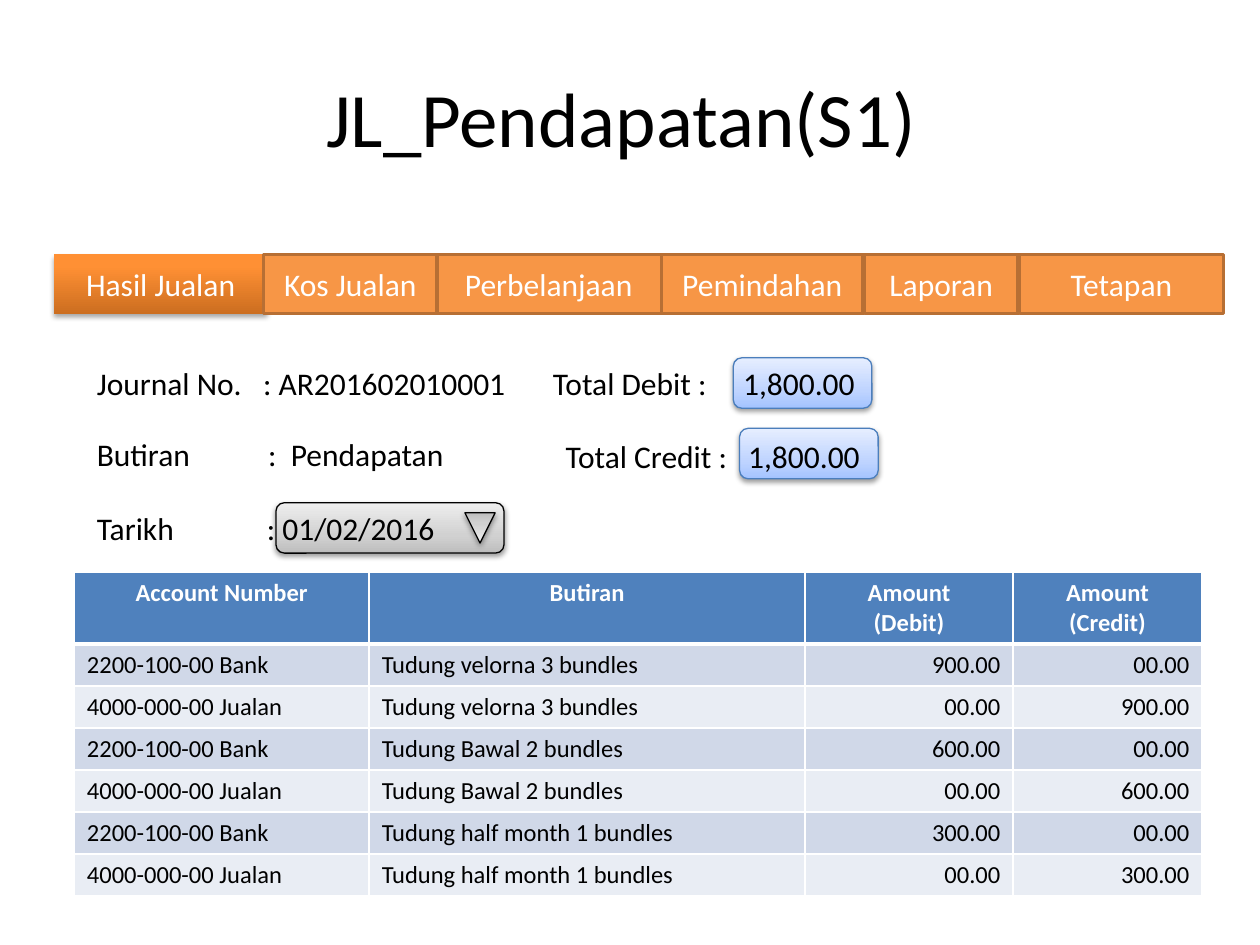
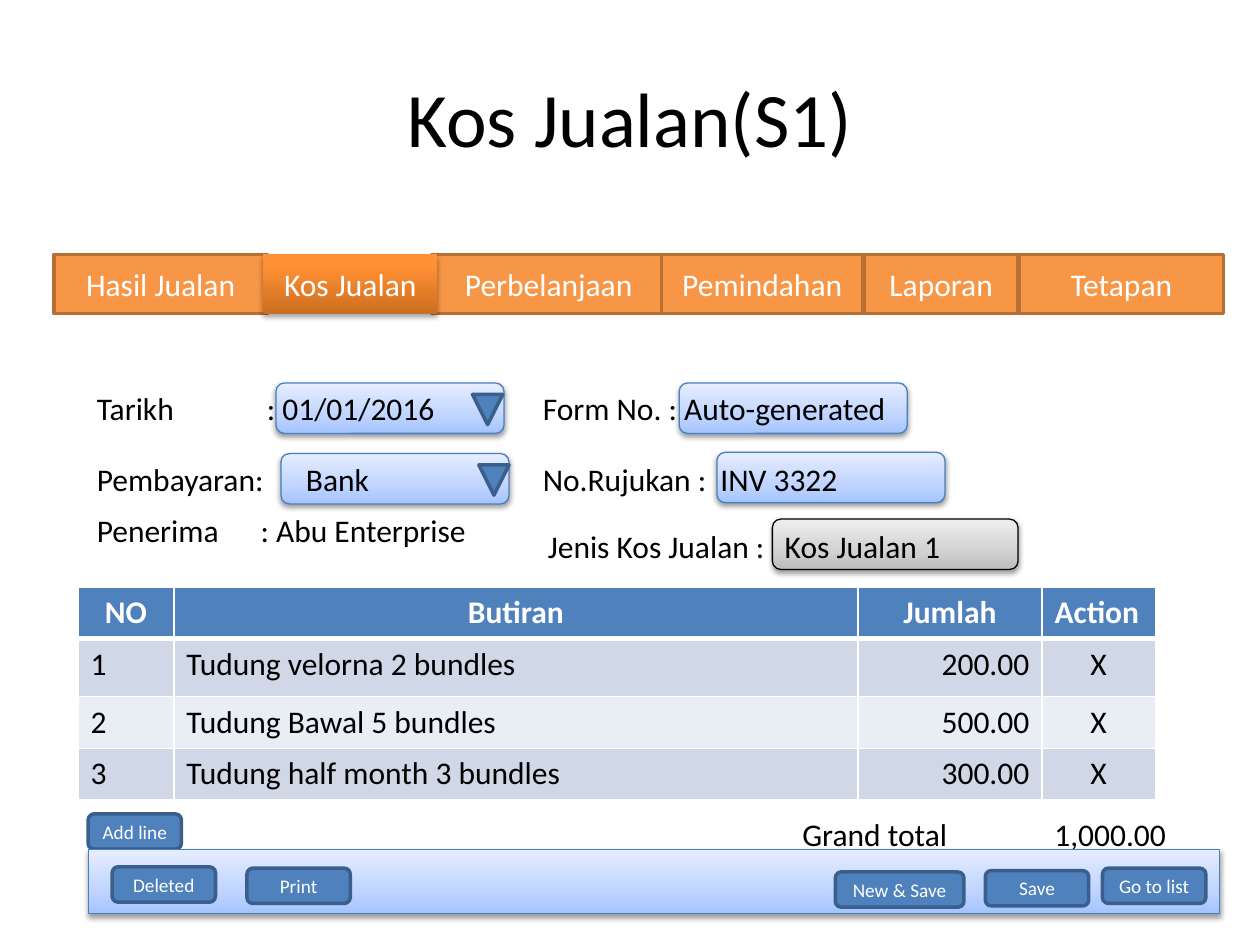
from lxml import etree
from pptx import Presentation
from pptx.dml.color import RGBColor
from pptx.enum import shapes, text
from pptx.oxml.ns import qn
from pptx.util import Inches, Pt

FONT = "Calibri"
BLACK, WHITE = "000000", "FFFFFF"
BLUE, BLUE_EDGE = "4F81BD", "3A5F8C"
ORANGE, ORANGE_EDGE = "F79646", "B76F34"
BANDS = ("D0D8E8", "E9EDF4")
PALE_BLUE = ((0, "A4C4FF"), (35, "BFD4FF"), (100, "E6EEFF"))
GREY = ((0, "BDBDBD"), (35, "D1D1D1"), (100, "EEEEEE"))
DEEP_ORANGE = ((0, "CC6E20"), (80, "FF9034"), (100, "FF9136"))
FIELD_EDGES = {PALE_BLUE: "4B7EBC", GREY: BLACK}

RECT = shapes.MSO_SHAPE.RECTANGLE
ROUNDED = shapes.MSO_SHAPE.ROUNDED_RECTANGLE
TRIANGLE = shapes.MSO_SHAPE.ISOSCELES_TRIANGLE
LEFT, CENTER, RIGHT = text.PP_ALIGN.LEFT, text.PP_ALIGN.CENTER, text.PP_ALIGN.RIGHT

MENU_BOX = (0.43, 2.02, 9.28, 0.47)
MENU = (
    ("Hasil Jualan", 0, 1.69),
    ("Perbelanjaan", 3, 1.85),
    ("Laporan", 6.43, 1.22),
    ("Tetapan", 7.66, 1.62),
    ("Pemindahan", 4.82, 1.6),
    ("Kos Jualan", 1.66, 1.38),
)
FIELD_HEIGHT = 0.4
ARROW_SIZE = 0.24


def rgb(hex_code):
    """Turn a hex string into a colour."""
    return RGBColor.from_string(hex_code)


def inches(*lengths):
    """Convert several lengths to Inches."""
    return [Inches(length) for length in lengths]


def write(frame, words, size, color, align=LEFT, bold=False):
    """Fill a text frame and format all its runs."""
    frame.text = words
    for paragraph in frame.paragraphs:
        paragraph.alignment = align
        for run in paragraph.runs:
            run.font.name, run.font.size, run.font.bold = FONT, Pt(size), bold
            run.font.color.rgb = rgb(color)


def add_color(parent, color, alpha=100):
    """Append a solid colour element with its opacity."""
    node = etree.SubElement(parent, qn("a:srgbClr"), val=color)
    if alpha < 100:
        etree.SubElement(node, qn("a:alpha"), val=str(alpha * 1000))


def fill_gradient(shape, stops):
    """Fill a shape upwards through the given colour stops."""
    shape.fill.gradient()
    gradient = shape.element.spPr.find(qn("a:gradFill"))
    gradient.clear()
    gradient.set("rotWithShape", "1")
    stop_list = etree.SubElement(gradient, qn("a:gsLst"))
    for position, color in stops:
        add_color(etree.SubElement(stop_list, qn("a:gs"), pos=str(position * 1000)), color)
    etree.SubElement(gradient, qn("a:lin"), ang="16200000", scaled="0")


def cast_shadow(shape, alpha, distance):
    """Drop a soft shadow straight below a shape."""
    effects = shape.element.spPr.find(qn("a:effectLst"))
    shadow = etree.SubElement(
        effects, qn("a:outerShdw"), blurRad=str(Pt(3.1)), dist=str(Pt(distance)),
        dir="5400000", rotWithShape="0")
    add_color(shadow, BLACK, alpha)


def add_block(parent, kind, box, fill, edge=None, edge_width=2):
    """Add a flat shape, or a shaded one when the fill is a list of stops."""
    block = parent.add_shape(kind, *inches(*box))
    block.shadow.inherit = False
    if isinstance(fill, str):
        block.fill.solid()
        block.fill.fore_color.rgb = rgb(fill)
    else:
        fill_gradient(block, fill)
        cast_shadow(block, 38 if edge else 35, 1.6 if edge else 1.8)
    if edge:
        block.line.color.rgb = rgb(edge)
        block.line.width = Pt(edge_width)
    else:
        block.line.fill.background()
    return block


def add_caption(slide, left, top, width, words, stops=()):
    """Place one line of text whose tabs reach the given stops."""
    frame = slide.shapes.add_textbox(*inches(left, top, width, FIELD_HEIGHT)).text_frame
    frame.word_wrap = True
    write(frame, words, 18, BLACK)
    if stops:
        tabs = etree.SubElement(frame.paragraphs[0]._p.get_or_add_pPr(), qn("a:tabLst"))
        for stop in stops:
            etree.SubElement(tabs, qn("a:tab"), pos=str(Inches(stop)), algn="l")


def add_field(slide, left, top, width, fill=PALE_BLUE):
    """Draw the shaded box behind an input value."""
    add_block(slide.shapes, ROUNDED, (left, top, width, FIELD_HEIGHT),
              fill, FIELD_EDGES[fill], 0.75)


def add_arrow(slide, left, top, fill=BLUE, edge=BLUE_EDGE, edge_width=2):
    """Draw the downward arrow of a drop-down field."""
    arrow = add_block(slide.shapes, TRIANGLE, (left, top, ARROW_SIZE, ARROW_SIZE),
                      fill, edge, edge_width)
    arrow.rotation = 180


def add_menu(slide, box, active):
    """Draw the menu bar with its active entry shaded."""
    left, top, _, height = box
    group = slide.shapes.add_group_shape().shapes
    for name, offset, width in MENU:
        look = (DEEP_ORANGE,) if name == active else (ORANGE, ORANGE_EDGE)
        entry = add_block(group, RECT, (left + offset, top, width, height), *look)
        write(entry.text_frame, name, 18, WHITE, CENTER)


def add_button(parent, left, top, width, name):
    """Draw a small labelled button."""
    button = add_block(parent, ROUNDED, (left, top, width, 0.28), BLUE, BLUE_EDGE)
    write(button.text_frame, name, 11, WHITE, CENTER)


def add_button_bar(slide, box):
    """Draw the bottom bar and the buttons on it."""
    left, top, _, _ = box
    group = slide.shapes.add_group_shape().shapes
    add_block(group, RECT, box, PALE_BLUE, FIELD_EDGES[PALE_BLUE], 0.75)
    for name, across, down, width in (
        ("Save", 7.12, 0.17, 0.82), ("New & Save", 5.93, 0.18, 1.02),
        ("Print", 1.26, 0.15, 0.82), ("Deleted", 0.19, 0.14, 0.82),
        ("Go to list", 8.05, 0.15, 0.82),
    ):
        add_button(group, left + across, top + down, width, name)


def style_cell(cell, fill, bottom_width):
    """Give a cell white borders and a solid fill."""
    properties = cell._tc.get_or_add_tcPr()
    for side, width in (("L", 1), ("R", 1), ("T", 1), ("B", bottom_width)):
        line = etree.SubElement(properties, qn(f"a:ln{side}"), w=str(Pt(width)))
        add_color(etree.SubElement(line, qn("a:solidFill")), WHITE)
    cell.fill.solid()
    cell.fill.fore_color.rgb = rgb(fill)


def add_ledger(slide, left, top, widths, heights, rows, size, aligns, header_aligns):
    """Build a banded table whose first row is the header."""
    box = inches(left, top, sum(widths), sum(heights))
    table = slide.shapes.add_table(len(rows), len(widths), *box).table
    for column, width in zip(table.columns, widths):
        column.width = Inches(width)
    for index, (row, height, values) in enumerate(zip(table.rows, heights, rows)):
        row.height = Inches(height)
        header = index == 0
        fill = BLUE if header else BANDS[(index - 1) % 2]
        for cell, value, align in zip(row.cells, values, header_aligns if header else aligns):
            style_cell(cell, fill, 3 if header else 1)
            write(cell.text_frame, value, size, WHITE if header else BLACK, align, header)


def start_slide(deck, heading, active):
    """Add a slide with its title and menu bar."""
    slide = deck.slides.add_slide(deck.slide_layouts[5])
    title = slide.shapes.title
    title.left, title.top, title.width, title.height = inches(0.5, 0.3, 9, 1.25)
    write(title.text_frame, heading, 44, BLACK, CENTER)
    add_menu(slide, MENU_BOX, active)
    return slide


def build_income_journal(deck):
    """Build the income journal slide."""
    slide = start_slide(deck, "JL_Pendapatan(S1) ", "Hasil Jualan")
    add_field(slide, 5.82, 2.84, 1.1)
    add_field(slide, 5.87, 3.4, 1.1)
    add_field(slide, 2.19, 3.99, 1.81, GREY)
    add_arrow(slide, 3.69, 4.07, GREY, BLACK, 0.75)
    add_caption(slide, 0.67, 2.84, 3.6, "Journal No.\t: AR201602010001", [1.32])
    add_caption(slide, 0.67, 3.4, 3, "Butiran\t:\tPendapatan", [1.36, 1.54])
    add_caption(slide, 0.67, 3.99, 2.92, "Tarikh\t: 01/02/2016", [1.35])
    add_caption(slide, 4.29, 2.84, 2.7, "Total Debit :\t1,800.00", [1.51])
    add_caption(slide, 4.39, 3.42, 3.23, "Total Credit :\t1,800.00", [1.45])

    sales = (("Tudung velorna 3 bundles", "900.00"),
             ("Tudung Bawal 2 bundles", "600.00"),
             ("Tudung half month 1 bundles", "300.00"))
    rows = [("Account Number", "Butiran", "Amount\n(Debit)", "Amount\n(Credit)")]
    for item, amount in sales:
        rows.append(("2200-100-00 Bank", item, amount, "00.00"))
        rows.append(("4000-000-00 Jualan", item, "00.00", amount))
    add_ledger(slide, 0.59, 4.54, (2.34, 3.46, 1.65, 1.5), [0.57] + [0.33] * 6, rows, 14,
               (LEFT, LEFT, RIGHT, RIGHT), (CENTER,) * 4)


def build_sales_cost(deck):
    """Build the cost of sales slide."""
    slide = start_slide(deck, "Kos Jualan(S1)", "Kos Jualan")
    for left, top in ((2.19, 3.04), (5.39, 3.04), (2.23, 3.6), (5.69, 3.59)):
        add_field(slide, left, top, 1.81)
    add_field(slide, 6.13, 4.12, 1.95, GREY)
    add_arrow(slide, 3.75, 3.13)
    add_arrow(slide, 3.8, 3.69)
    add_caption(slide, 0.67, 3.04, 2.92, "Tarikh\t: 01/01/2016", [1.35])
    add_caption(slide, 0.67, 3.6, 2.39, "Pembayaran:\tBank", [1.66])
    add_caption(slide, 0.67, 4.01, 3.3, "Penerima\t: Abu Enterprise", [1.3])
    add_caption(slide, 4.21, 3.04, 3, "Form No. : Auto-generated")
    add_caption(slide, 4.21, 3.6, 2.6, "No.Rujukan :\tINV 3322", [1.41])
    add_caption(slide, 4.25, 4.13, 3.4, "Jenis Kos Jualan :\tKos Jualan 1", [1.88])

    costs = (("Tudung velorna 2 bundles", "200.00"),
             ("Tudung Bawal 5 bundles", "500.00"),
             ("Tudung half month 3 bundles", "300.00"))
    rows = [("NO", "Butiran", "Jumlah", "Action")]
    rows += [(str(number), item, amount, "X")
             for number, (item, amount) in enumerate(costs, 1)]
    add_ledger(slide, 0.62, 4.66, (0.76, 5.43, 1.46, 0.9), (0.41, 0.46, 0.41, 0.41), rows, 18,
               (LEFT, LEFT, RIGHT, CENTER), (CENTER, CENTER, CENTER, LEFT))
    add_caption(slide, 6.27, 6.42, 1.4, "Grand total")
    add_caption(slide, 8.27, 6.42, 1.15, "1,000.00")
    add_button(slide.shapes, 0.7, 6.46, 0.74, "Add line")
    add_button_bar(slide, (0.7, 6.74, 8.98, 0.51))


def main():
    """Build the deck and save it."""
    deck = Presentation()
    deck.slide_width, deck.slide_height = inches(10, 7.5)
    build_income_journal(deck)
    build_sales_cost(deck)
    deck.save("out.pptx")


if __name__ == "__main__":
    main()
